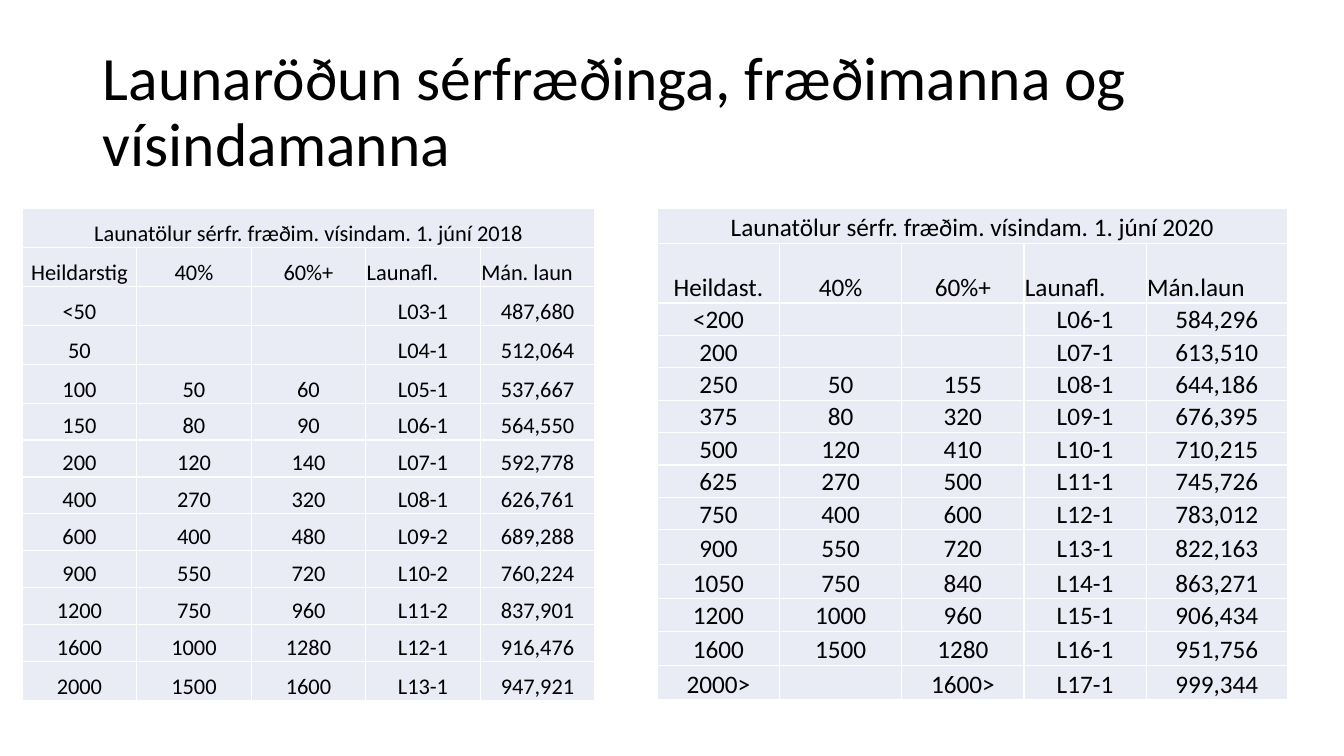
"""Build a slide with two salary grading tables, 2018 beside 2020."""
import dataclasses

import lxml.etree
import pptx
import pptx.dml.color
import pptx.enum.text
import pptx.oxml.ns
import pptx.util

TITLE = "Launaröðun sérfræðinga, fræðimanna og vísindamanna"

SALARIES_2018 = {
    "caption": "Launatölur sérfr. fræðim. vísindam. 1. júní 2018",
    "rows": [
        ("Heildarstig", "40%", "60%+", "Launafl.", "Mán. laun"),
        ("<50", "", "", "L03-1", "487,680"),
        ("50", "", "", "L04-1", "512,064"),
        ("100", "50", "60", "L05-1", "537,667"),
        ("150", "80", "90", "L06-1", "564,550"),
        ("200", "120", "140", "L07-1", "592,778"),
        ("400", "270", "320", "L08-1", "626,761"),
        ("600", "400", "480", "L09-2", "689,288"),
        ("900", "550", "720", "L10-2", "760,224"),
        ("1200", "750", "960", "L11-2", "837,901"),
        ("1600", "1000", "1280", "L12-1", "916,476"),
        ("2000", "1500", "1600", "L13-1", "947,921"),
    ],
    "box": (22, 207, 568, 488),
    "column_weights": [1] * 5,
    "row_weights": [39] * 5 + [37] * 7 + [39],
}

SALARIES_2020 = {
    "caption": "Launatölur sérfr. fræðim. vísindam. 1. júní 2020",
    "rows": [
        ("Heildast.", "40%", "60%+", "Launafl.", "Mán.laun"),
        ("<200", "", "", "L06-1", "584,296"),
        ("200", "", "", "L07-1", "613,510"),
        ("250", "50", "155", "L08-1", "644,186"),
        ("375", "80", "320", "L09-1", "676,395"),
        ("500", "120", "410", "L10-1", "710,215"),
        ("625", "270", "500", "L11-1", "745,726"),
        ("750", "400", "600", "L12-1", "783,012"),
        ("900", "550", "720", "L13-1", "822,163"),
        ("1050", "750", "840", "L14-1", "863,271"),
        ("1200", "1000", "960", "L15-1", "906,434"),
        ("1600", "1500", "1280", "L16-1", "951,756"),
        ("2000>", "", "1600>", "L17-1", "999,344"),
    ],
    "box": (652, 207, 625, 488),
    "column_weights": [121] * 4 + [140],
    "row_weights": [34, 59] + [32] * 7 + [34, 34, 32, 34, 34],
}

PAGE_SIZE = (1333, 750)
TITLE_BOX = (92, 40, 1150, 145)
CELL_INSET = 1
LEFT_ALIGNED_HEADERS = (3, 4)


@dataclasses.dataclass(frozen=True)
class Theme:
    """Colours, font and type sizes of the slide."""
    font: str = "Calibri"
    ink: str = "000000"
    cell: str = "E9EBF5"
    border: str = "FFFFFF"
    border_width: int = 1
    title_size: int = 44
    size_2018: int = 16
    size_2020: int = 18


THEME = Theme()
ALIGN = pptx.enum.text.PP_ALIGN
ANCHOR = pptx.enum.text.MSO_ANCHOR


def px(length):
    """Turn px, at 100 to the inch, into EMU."""
    return pptx.util.Emu(round(length * 9144))


def format_text(para, size, align):
    """Align a paragraph and give its runs the slide's font."""
    para.alignment = align
    for span in para.runs:
        span.font.name = THEME.font
        span.font.size = pptx.util.Pt(size)
        span.font.bold = False
        span.font.color.rgb = pptx.dml.color.RGBColor.from_string(THEME.ink)


def add_borders(cell):
    """Put the theme's border on all four sides of a cell."""
    properties = cell._tc.get_or_add_tcPr()
    tag = pptx.oxml.ns.qn
    for index, side in enumerate(("a:lnL", "a:lnR", "a:lnT", "a:lnB")):
        line = lxml.etree.Element(tag(side), w=str(pptx.util.Pt(THEME.border_width)))
        fill = lxml.etree.SubElement(line, tag("a:solidFill"))
        lxml.etree.SubElement(fill, tag("a:srgbClr"), val=THEME.border)
        properties.insert(index, line)


def fill_cell(cell, text, size, align):
    """Write and format one table cell."""
    cell.text_frame.text = text
    format_text(cell.text_frame.paragraphs[0], size, align)
    cell.vertical_anchor = ANCHOR.BOTTOM
    cell.margin_left = cell.margin_right = cell.margin_top = px(CELL_INSET)
    cell.margin_bottom = 0
    cell.fill.solid()
    cell.fill.fore_color.rgb = pptx.dml.color.RGBColor.from_string(THEME.cell)
    add_borders(cell)


def add_salary_table(page, salaries, size):
    """Add a captioned table whose rows and columns share its box by weight."""
    columns, heights = salaries["column_weights"], salaries["row_weights"]
    left, top, width, height = salaries["box"]
    table = page.shapes.add_table(
        len(heights), len(columns), px(left), px(top), px(width), px(height)
    ).table
    table.first_row = table.horz_banding = False
    for column, weight in zip(table.columns, columns):
        column.width = px(width * weight / sum(columns))
    for row, weight in zip(table.rows, heights):
        row.height = px(height * weight / sum(heights))
    caption_row = (salaries["caption"],) + ("",) * (len(columns) - 1)
    for row_index, texts in enumerate([caption_row] + salaries["rows"]):
        for column_index, text in enumerate(texts):
            is_left = row_index == 1 and column_index in LEFT_ALIGNED_HEADERS
            align = ALIGN.LEFT if is_left else ALIGN.CENTER
            fill_cell(table.cell(row_index, column_index), text, size, align)
    table.cell(0, 0).merge(table.cell(0, len(columns) - 1))


def add_title(page):
    """Place and format the title placeholder."""
    title = page.shapes.title
    title.left, title.top, title.width, title.height = map(px, TITLE_BOX)
    frame = title.text_frame
    frame.text = TITLE
    frame.word_wrap = True
    frame.auto_size = pptx.enum.text.MSO_AUTO_SIZE.NONE
    frame.vertical_anchor = ANCHOR.MIDDLE
    frame.paragraphs[0].line_spacing = 0.9
    format_text(frame.paragraphs[0], THEME.title_size, ALIGN.LEFT)


def main():
    """Build and save the deck."""
    deck = pptx.Presentation()
    deck.slide_width, deck.slide_height = map(px, PAGE_SIZE)
    page = deck.slides.add_slide(deck.slide_layouts.get_by_name("Title Only"))
    add_title(page)
    add_salary_table(page, SALARIES_2018, THEME.size_2018)
    add_salary_table(page, SALARIES_2020, THEME.size_2020)
    deck.save("out.pptx")


if __name__ == "__main__":
    main()
